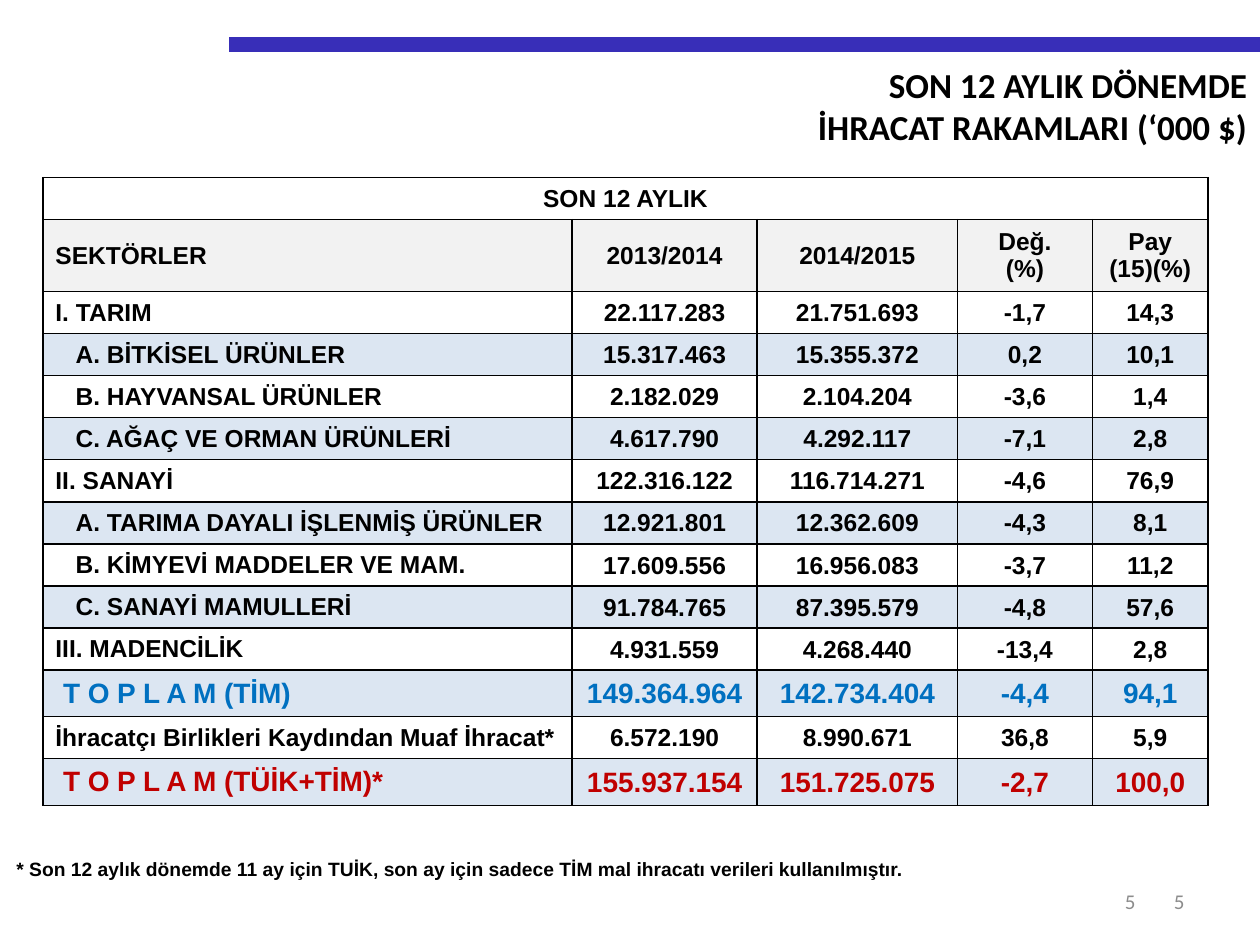
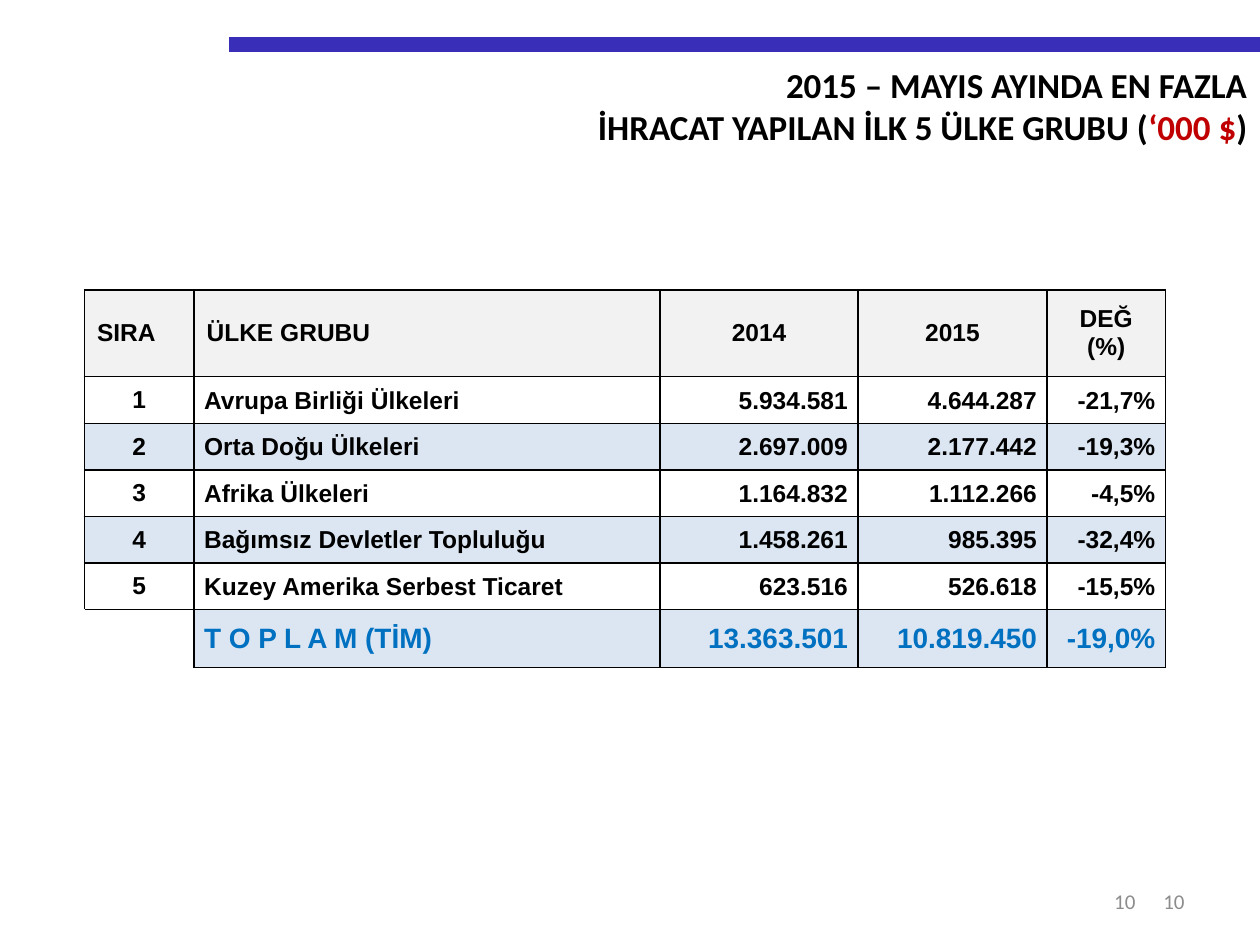
from lxml import etree
from pptx import Presentation
from pptx.dml.color import RGBColor
from pptx.enum.shapes import MSO_CONNECTOR
from pptx.enum.text import MSO_ANCHOR, MSO_AUTO_SIZE, PP_ALIGN
from pptx.oxml.ns import qn
from pptx.util import Inches, Pt

LEFT, CENTER, RIGHT = PP_ALIGN.LEFT, PP_ALIGN.CENTER, PP_ALIGN.RIGHT
TOP, MIDDLE = MSO_ANCHOR.TOP, MSO_ANCHOR.MIDDLE
WIDTH, HEIGHT = 10, 7.5
TITLE_ONLY = 5
COLORS = {
    "text": "000000", "band": "382EB8", "number": "8C8C8C", "header": "F2F2F2",
    "stripe": "DCE6F2", "blue": "0070C0", "red": "C00000",
}
WIDE_MARGINS = (0.1, 0.05, 0.1, 0.05)
TIGHT_MARGINS = (0.01, 0.01, 0.01, 0)
LABEL_MARGINS = (0.08, 0.01, 0.01, 0)
AMOUNT_MARGINS = (0.01, 0.01, 0.08, 0)
SUB, SUM = 0.16, 0.06

SECTORS = {
    "at": (0.34, 1.41),
    "caption": "SON 12 AYLIK",
    "header": ["SEKTÖRLER", "2013/2014", "2014/2015", "Değ.\n(%)", "Pay\n(15)(%)"],
    "text_columns": 1,
    "columns": [(4.2, LEFT, WIDE_MARGINS)]
    + [(width, CENTER, TIGHT_MARGINS) for width in (1.47, 1.59, 1.07, 0.92)],
    "heights": {"caption": 0.33, "header": 0.57, "row": 0.33, "total": 0.37},
    "rows": [
        ("text", 0, ["I. TARIM", "22.117.283", "21.751.693", "-1,7", "14,3"]),
        ("text", SUB, ["A. BİTKİSEL ÜRÜNLER", "15.317.463", "15.355.372", "0,2", "10,1"]),
        ("text", SUB, ["B. HAYVANSAL ÜRÜNLER", "2.182.029", "2.104.204", "-3,6", "1,4"]),
        ("text", SUB, ["C. AĞAÇ VE ORMAN ÜRÜNLERİ", "4.617.790", "4.292.117", "-7,1", "2,8"]),
        ("text", 0, ["II. SANAYİ", "122.316.122", "116.714.271", "-4,6", "76,9"]),
        ("text", SUB, ["A. TARIMA DAYALI İŞLENMİŞ ÜRÜNLER", "12.921.801", "12.362.609", "-4,3", "8,1"]),
        ("text", SUB, ["B. KİMYEVİ MADDELER VE MAM.", "17.609.556", "16.956.083", "-3,7", "11,2"]),
        ("text", SUB, ["C. SANAYİ MAMULLERİ", "91.784.765", "87.395.579", "-4,8", "57,6"]),
        ("text", 0, ["III. MADENCİLİK", "4.931.559", "4.268.440", "-13,4", "2,8"]),
        ("blue", SUM, ["T O P L A M (TİM)", "149.364.964", "142.734.404", "-4,4", "94,1"]),
        ("text", 0, ["İhracatçı Birlikleri Kaydından Muaf İhracat*", "6.572.190", "8.990.671", "36,8", "5,9"]),
        ("red", SUM, ["T O P L A M (TÜİK+TİM)*", "155.937.154", "151.725.075", "-2,7", "100,0"]),
    ],
}
COUNTRY_GROUPS = {
    "at": (0.67, 2.3),
    "header": ["SIRA", "ÜLKE GRUBU", "2014", "2015", "DEĞ\n(%)"],
    "text_columns": 2,
    "columns": [(0.87, CENTER, WIDE_MARGINS), (3.7, LEFT, LABEL_MARGINS)]
    + [(width, RIGHT, AMOUNT_MARGINS) for width in (1.57, 1.5, 0.94)],
    "heights": {"header": 0.69, "row": 0.37, "total": 0.46},
    "rows": [
        ("text", 0, ["1", "Avrupa Birliği Ülkeleri", "5.934.581", "4.644.287", "-21,7%"]),
        ("text", 0, ["2", "Orta Doğu Ülkeleri", "2.697.009", "2.177.442", "-19,3%"]),
        ("text", 0, ["3", "Afrika Ülkeleri", "1.164.832", "1.112.266", "-4,5%"]),
        ("text", 0, ["4", "Bağımsız Devletler Topluluğu", "1.458.261", "985.395", "-32,4%"]),
        ("text", 0, ["5", "Kuzey Amerika Serbest Ticaret", "623.516", "526.618", "-15,5%"]),
        ("blue", 0, ["", "T O P L A M (TİM)", "13.363.501", "10.819.450", "-19,0%"]),
    ],
}
FOOTNOTE = ("* Son 12 aylık dönemde 11 ay için TUİK, son ay için sadece TİM "
            "mal ihracatı verileri kullanılmıştır.")
SLIDES = [
    {
        "number": "5",
        "title": [[("SON 12 AYLIK DÖNEMDE", "text")],
                  [("İHRACAT RAKAMLARI (‘000 $)", "text")]],
        "table": SECTORS,
        "footnote": FOOTNOTE,
    },
    {
        "number": "10",
        "title": [[("2015 – MAYIS AYINDA EN FAZLA", "text")],
                  [("İHRACAT YAPILAN İLK 5 ÜLKE GRUBU (", "text"), ("‘000 $", "red"), (")", "text")]],
        "table": COUNTRY_GROUPS,
    },
]


def rgb(name):
    return RGBColor.from_string(COLORS[name])


def style_font(font, name, size, color, bold):
    font.name, font.size, font.bold = name, Pt(size), bold
    font.color.rgb = rgb(color)


def place(shape, left, top, width, height):
    shape.left, shape.top = Inches(left), Inches(top)
    shape.width, shape.height = Inches(width), Inches(height)


def add_band(slide):
    y = Inches(0.35)
    band = slide.shapes.add_connector(MSO_CONNECTOR.STRAIGHT, Inches(1.82), y, Inches(WIDTH), y)
    band.line.color.rgb = rgb("band")
    band.line.width = Pt(8.5)
    etree.SubElement(band._element.spPr, qn("a:effectLst"))


def add_number(slide, number, left, width):
    box = slide.shapes.add_textbox(Inches(left), Inches(6.95), Inches(width), Inches(0.4))
    frame = box.text_frame
    frame.word_wrap = True
    frame.vertical_anchor = MIDDLE
    frame.text = number
    paragraph = frame.paragraphs[0]
    paragraph.alignment = RIGHT
    style_font(paragraph.font, "Calibri", 12, "number", False)


def set_title(slide, lines):
    title = slide.shapes.title
    place(title, 1.06, 0.45, WIDTH - 1.06, 0.77)
    frame = title.text_frame
    frame.auto_size = MSO_AUTO_SIZE.NONE
    frame.vertical_anchor = TOP
    for index, runs in enumerate(lines):
        paragraph = frame.add_paragraph() if index else frame.paragraphs[0]
        paragraph.alignment = RIGHT
        for text, color in runs:
            run = paragraph.add_run()
            run.text = text
            style_font(run.font, "Calibri", 20, color, True)


def add_grid(slide, at, widths, heights):
    frame = slide.shapes.add_table(
        len(heights), len(widths), *map(Inches, (*at, sum(widths), sum(heights))))
    table = frame.table
    table.first_row = table.horz_banding = False
    for column, width in zip(table.columns, widths):
        column.width = Inches(width)
    for row, height in zip(table.rows, heights):
        row.height = Inches(height)
    return table


def add_borders(cell, sides):
    properties = cell._tc.get_or_add_tcPr()
    for index, side in enumerate(sides):
        line = etree.Element(qn(f"a:ln{side}"), w=str(Pt(1)))
        fill = etree.SubElement(line, qn("a:solidFill"))
        etree.SubElement(fill, qn("a:srgbClr"), val=COLORS["text"])
        properties.insert(index, line)


def fill_cell(cell, text, alignment, margins, size=14, color="text", fill=None, indent=0, sides="LRTB"):
    left, top, right, bottom = margins
    cell.margin_left, cell.margin_top = Inches(left + indent), Inches(top)
    cell.margin_right, cell.margin_bottom = Inches(right), Inches(bottom)
    cell.vertical_anchor = MIDDLE
    cell.text = text
    for paragraph in cell.text_frame.paragraphs:
        paragraph.alignment = alignment
        style_font(paragraph.font, "Arial", size, color, True)
    if fill:
        cell.fill.solid()
        cell.fill.fore_color.rgb = rgb(fill)
    else:
        cell.fill.background()
    add_borders(cell, sides)


def add_data_table(slide, data):
    heights = data["heights"]
    columns = data["columns"]
    kinds = ["caption"] if "caption" in data else []
    kinds += ["header"] + ["row" if color == "text" else "total" for color, _, _ in data["rows"]]
    table = add_grid(slide, data["at"], [width for width, _, _ in columns],
                     [heights[kind] for kind in kinds])
    header_row = kinds.index("header")
    if header_row:
        for index in range(len(columns)):
            fill_cell(table.cell(0, index), "" if index else data["caption"], CENTER, WIDE_MARGINS)
        table.cell(0, 0).merge(table.cell(0, len(columns) - 1))
    for index, text in enumerate(data["header"]):
        alignment = LEFT if index < data["text_columns"] else CENTER
        fill_cell(table.cell(header_row, index), text, alignment, WIDE_MARGINS, fill="header")
    for row_index, (color, indent, values) in enumerate(data["rows"]):
        size = 14 if color == "text" else 16
        stripe = "stripe" if row_index % 2 else None
        for index, (text, (_, alignment, margins)) in enumerate(zip(values, columns)):
            fill_cell(table.cell(header_row + 1 + row_index, index), text, alignment, margins,
                      size, color, stripe if text else None,
                      0 if index else indent, "LRTB" if text else "RT")


def add_footnote(slide, text):
    table = add_grid(slide, (0.12, 6.74), [7.4], [0.31, 0.31])
    for index, line in enumerate((text, "")):
        fill_cell(table.cell(index, 0), line, LEFT, TIGHT_MARGINS, size=11, sides="")


def main():
    presentation = Presentation()
    presentation.slide_width, presentation.slide_height = Inches(WIDTH), Inches(HEIGHT)
    for content in SLIDES:
        slide = presentation.slides.add_slide(presentation.slide_layouts[TITLE_ONLY])
        add_band(slide)
        for left, width in ((7.17, 2.33), (7.01, 2.1)):
            add_number(slide, content["number"], left, width)
        set_title(slide, content["title"])
        add_data_table(slide, content["table"])
        if "footnote" in content:
            add_footnote(slide, content["footnote"])
    presentation.save("out.pptx")


if __name__ == "__main__":
    main()
